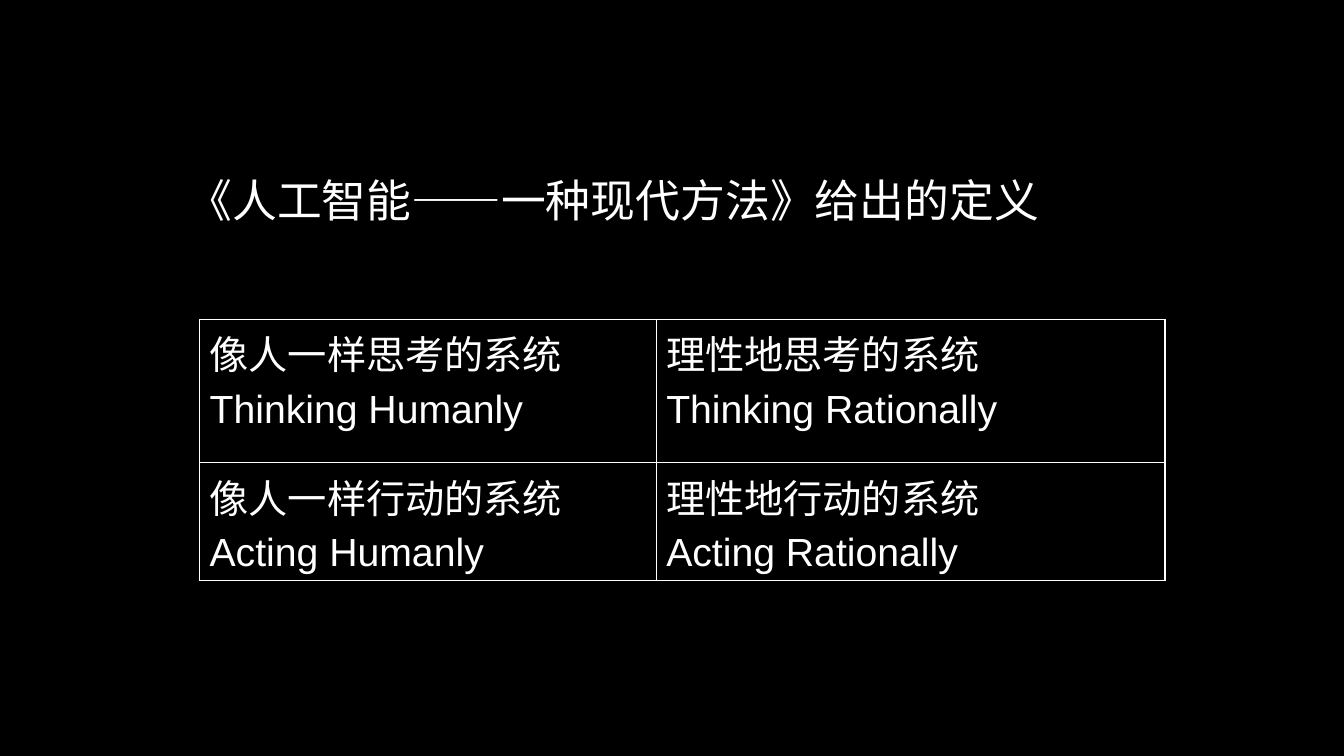
from dataclasses import dataclass

from lxml import etree
from pptx import Presentation
from pptx.dml.color import RGBColor
from pptx.enum.text import MSO_ANCHOR, PP_ALIGN
from pptx.oxml.ns import qn
from pptx.util import Cm, Pt

LEFT = PP_ALIGN.LEFT
MIDDLE = MSO_ANCHOR.MIDDLE
TITLE_ONLY = 5


@dataclass(frozen=True)
class Theme:
    background: str = "000000"
    ink: str = "FFFFFF"
    title_font: str = "Cabin"
    body_font: str = "Arial"
    title_size: int = 32
    body_size: int = 28
    border_width: int = 1
    line_gap: int = 5


THEME = Theme()

TITLE = "《人工智能——一种现代方法》给出的定义"
DEFINITIONS = [
    [("像人一样思考的系统", "Thinking Humanly"), ("理性地思考的系统", "Thinking Rationally")],
    [("像人一样行动的系统", "Acting Humanly"), ("理性地行动的系统", "Acting Rationally")],
]
COLUMN_SHARES = (0.473, 0.527)
ROW_SHARES = (0.55, 0.45)


def style_font(font, name, size):
    font.name = name
    font.size = Pt(size)
    font.bold = False
    font.color.rgb = RGBColor.from_string(THEME.ink)


def fill_title(page, left, top, width, height):
    title = page.shapes.title
    title.left, title.top, title.width, title.height = left, top, width, height
    frame = title.text_frame
    frame.text = TITLE
    frame.word_wrap = True
    frame.vertical_anchor = MIDDLE
    para = frame.paragraphs[0]
    para.alignment = LEFT
    style_font(para.runs[0].font, THEME.title_font, THEME.title_size)


def draw_borders(cell):
    properties = cell._tc.get_or_add_tcPr()
    for side in ("lnL", "lnR", "lnT", "lnB"):
        line = etree.SubElement(properties, qn(f"a:{side}"), w=str(Pt(THEME.border_width)))
        solid = etree.SubElement(line, qn("a:solidFill"))
        etree.SubElement(solid, qn("a:srgbClr"), val=THEME.ink)


def fill_cell(cell, lines):
    draw_borders(cell)
    cell.fill.background()
    cell.text_frame.text = "\n".join(lines)
    for index, para in enumerate(cell.text_frame.paragraphs):
        para.alignment = LEFT
        if index:
            para.space_before = Pt(THEME.line_gap)
        style_font(para.runs[0].font, THEME.body_font, THEME.body_size)


def add_definition_table(page, left, top, width, height):
    table = page.shapes.add_table(
        len(ROW_SHARES), len(COLUMN_SHARES), left, top, width, height
    ).table
    table.first_row = False
    table.horz_banding = False
    for column, share in zip(table.columns, COLUMN_SHARES):
        column.width = int(width * share)
    for row, share, entries in zip(table.rows, ROW_SHARES, DEFINITIONS):
        row.height = int(height * share)
        for cell, lines in zip(row.cells, entries):
            fill_cell(cell, lines)


def build_definition_page(deck):
    page = deck.slides.add_slide(deck.slide_layouts[TITLE_ONLY])
    page.background.fill.solid()
    page.background.fill.fore_color.rgb = RGBColor.from_string(THEME.background)
    fill_title(page, Cm(4.47), Cm(4.22), Cm(23.9), Cm(1.63))
    add_definition_table(page, Cm(5.03), Cm(8.05), Cm(24.33), Cm(6.57))


def main():
    deck = Presentation()
    deck.slide_width, deck.slide_height = Cm(33.87), Cm(19.05)
    build_definition_page(deck)
    deck.save("out.pptx")


if __name__ == "__main__":
    main()
